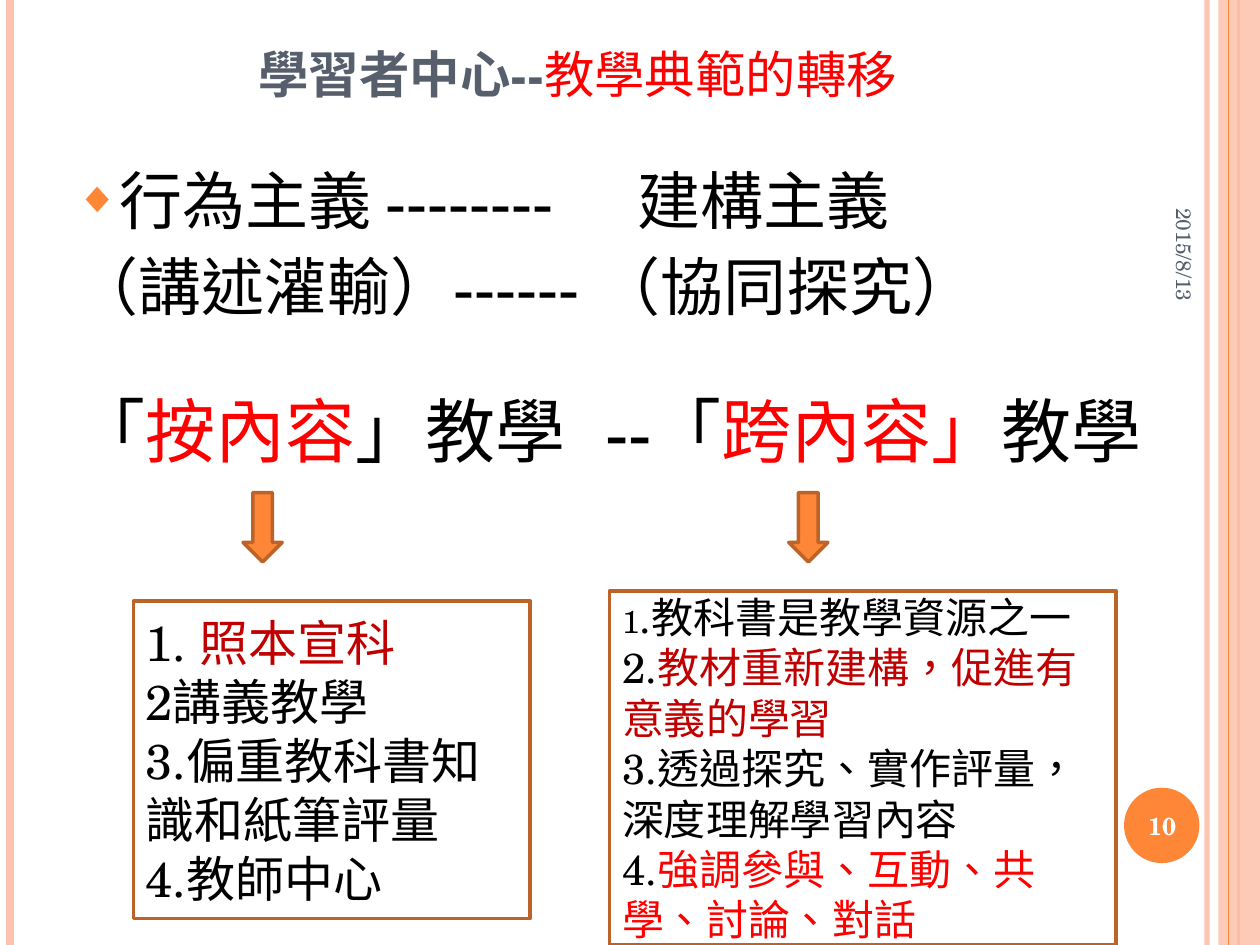
from lxml.etree import SubElement
from pptx import Presentation
from pptx.dml.color import RGBColor
from pptx.enum.shapes import MSO_CONNECTOR as Connector, MSO_SHAPE as Shape
from pptx.enum.text import MSO_ANCHOR as Anchor, MSO_AUTO_SIZE as AutoSize, PP_ALIGN as Align
from pptx.oxml.ns import qn
from pptx.util import Cm, Pt

FONT = "TeX Gyre Schola"
CJK_FONT = "Noto Sans CJK SC"
ORANGE, PEACH, BROWN, SLATE = "FE8637", "FEC3AE", "BC6329", "575F6D"
BLACK, WHITE, RED, DARK_RED = "000000", "FFFFFF", "FF0000", "C00000"
PAGE_WIDTH, PAGE_HEIGHT = 25.4, 19.05


def paint(fill, color, opacity=100):
    """Set a solid fill's colour and its opacity in percent."""
    fill.solid()
    fill.fore_color.rgb = RGBColor.from_string(color)
    if opacity < 100:
        clr = next(fill._xPr.iter(qn("a:srgbClr")))
        SubElement(clr, qn("a:alpha"), val=str(opacity * 1000))


def place(shape, left, top, width, height):
    shape.left, shape.top = Cm(left), Cm(top)
    shape.width, shape.height = Cm(width), Cm(height)


def add_vertical_line(slide, x, weight, color, opacity=100):
    line = slide.shapes.add_connector(Connector.STRAIGHT, Cm(x), Cm(0), Cm(x), Cm(PAGE_HEIGHT))
    line.line.width = Pt(weight)
    paint(line.line.fill, color, opacity)
    SubElement(line._element.spPr, qn("a:effectLst"))


def add_shape(slide, kind, bounds, fill, outline=None, opacity=100):
    shape = slide.shapes.add_shape(kind, *map(Cm, bounds))
    shape.shadow.inherit = False
    paint(shape.fill, fill, opacity)
    if outline:
        shape.line.width = Pt(2)
        paint(shape.line.fill, outline)
    else:
        shape.line.fill.background()
    return shape


def add_span(para, text, size, color=BLACK, bold=False, font=FONT, spacing=0):
    """Add a run; spacing is extra letter spacing in points."""
    span = para.add_run()
    span.text = text
    span.font.size, span.font.bold, span.font.name = Pt(size), bold, font
    span.font.color.rgb = RGBColor.from_string(color)
    props = span._r.get_or_add_rPr()
    props.set("lang", "zh-TW")
    if spacing:
        props.set("spc", str(spacing * 100))


def write_paragraphs(frame, paragraphs, size, align=Align.LEFT):
    """Fill a frame; each paragraph is a list of (text, colour, other span options)."""
    frame.word_wrap = True
    frame.auto_size = AutoSize.NONE
    for index, spans in enumerate(paragraphs):
        para = frame.add_paragraph() if index else frame.paragraphs[0]
        para.alignment = align
        para._p.get_or_add_pPr().set("hangingPunct", "0")
        for text, color, *options in spans:
            add_span(para, text, **{"size": size, "color": color, **(options[0] if options else {})})


def format_paragraph(para, space_before, bullet=False, tab=None):
    """Set spacing, a diamond bullet or none, and a tab stop in cm."""
    para.space_before = Pt(space_before)
    props = para._p.get_or_add_pPr()
    hang = Cm(0.76) if bullet else 0
    props.set("marL", str(hang))
    props.set("indent", str(-hang))
    if bullet:
        SubElement(SubElement(props, qn("a:buClr")), qn("a:srgbClr"), val=ORANGE)
        SubElement(props, qn("a:buSzPct"), val="70000")
        SubElement(props, qn("a:buChar"), char="◆")
    else:
        SubElement(props, qn("a:buNone"))
    if tab:
        SubElement(SubElement(props, qn("a:tabLst")), qn("a:tab"), pos=str(Cm(tab)), algn="l")


def add_frame_lines(slide):
    add_vertical_line(slide, 24.33, 3, PEACH, 93)
    add_vertical_line(slide, 0.2, 4.5, PEACH)
    add_vertical_line(slide, 24.97, 1.5, ORANGE)
    add_shape(slide, Shape.RECTANGLE, (24.56, 0, 0.84, PAGE_HEIGHT), PEACH, opacity=87)
    add_vertical_line(slide, 24.77, 0.75, ORANGE)


def fill_title(title):
    place(title, 1.27, 0.48, 20.75, 2.57)
    frame = title.text_frame
    frame.vertical_anchor = Anchor.TOP
    spans = [("學習者中心--", SLATE, {"bold": True}), ("教學典範的轉移", RED)]
    write_paragraphs(frame, [spans], 36, Align.CENTER)
    for span in frame.paragraphs[0].runs:
        span._r.rPr.set("cap", "small")


def fill_body(body):
    place(body, 1.27, 3.12, 23.04, 14.86)
    big = {"size": 40}
    write_paragraphs(body.text_frame, [
        [("行為主義 --------\t建構主義", BLACK)],
        [("（講述灌輸）------ （協同探究）", BLACK)],
        [("「", BLACK, big), ("按內容", RED, big), ("」教學", BLACK, big),
         (" ", BLACK, {"size": 40, "spacing": 14}), ("--「", BLACK, big),
         ("跨內容」", RED, big), ("教學", BLACK, big)],
    ], 36)
    schools, methods, contents = body.text_frame.paragraphs
    format_paragraph(schools, 6, bullet=True, tab=11.33)
    format_paragraph(methods, 6)
    format_paragraph(contents, 37)


def add_list_box(slide, bounds, paragraphs, size):
    box = add_shape(slide, Shape.RECTANGLE, bounds, WHITE, BROWN)
    box.text_frame.vertical_anchor = Anchor.MIDDLE
    write_paragraphs(box.text_frame, paragraphs, size)


def add_label(slide, bounds, text, size, color, align, bold=False, rotation=0):
    label = slide.shapes.add_textbox(*map(Cm, bounds))
    label.rotation = rotation
    label.text_frame.vertical_anchor = Anchor.MIDDLE
    write_paragraphs(label.text_frame, [[(text, color, {"bold": bold})]], size, align)


def main():
    deck = Presentation()
    deck.slide_width, deck.slide_height = Cm(PAGE_WIDTH), Cm(PAGE_HEIGHT)
    page = deck.slides.add_slide(deck.slide_layouts[1])
    add_frame_lines(page)
    fill_title(page.shapes.title)
    fill_body(page.placeholders[1])
    for left in (4.9, 15.9):
        add_shape(page, Shape.DOWN_ARROW, (left, 9.93, 0.79, 1.4), ORANGE, BROWN)
    add_list_box(page, (12.29, 11.91, 10.21, 7.14), [
        [("1", BLACK, {"size": 18}), (".教科書是教學資源之一", BLACK)],
        [("2.", BLACK), ("教材重新建構，促進有意義的學習", DARK_RED)],
        [("3.透過探究、實作評量，深度理解學習內容", BLACK)],
        [("4.", BLACK), ("強調參與、互動、共學、討論、對話", RED, {"font": CJK_FONT})],
    ], 24)
    add_list_box(page, (2.69, 12.12, 8, 6.4), [
        [("1. ", BLACK), ("照本宣科", DARK_RED)],
        [("2講義教學", BLACK)],
        [("3.偏重教科書知識和紙筆評量", BLACK)],
        [("4.教師中心", BLACK)],
    ], 28)
    add_shape(page, Shape.OVAL, (22.66, 15.88, 1.52, 1.52), ORANGE)
    add_label(page, (22.58, 15.93, 1.7, 1.45), "10", 14, WHITE, Align.CENTER, bold=True)
    add_label(page, (21.08, 3, 5.59, 1.07), "2015/8/13", 12, SLATE, Align.RIGHT, rotation=90)
    deck.save("out.pptx")


if __name__ == "__main__":
    main()
